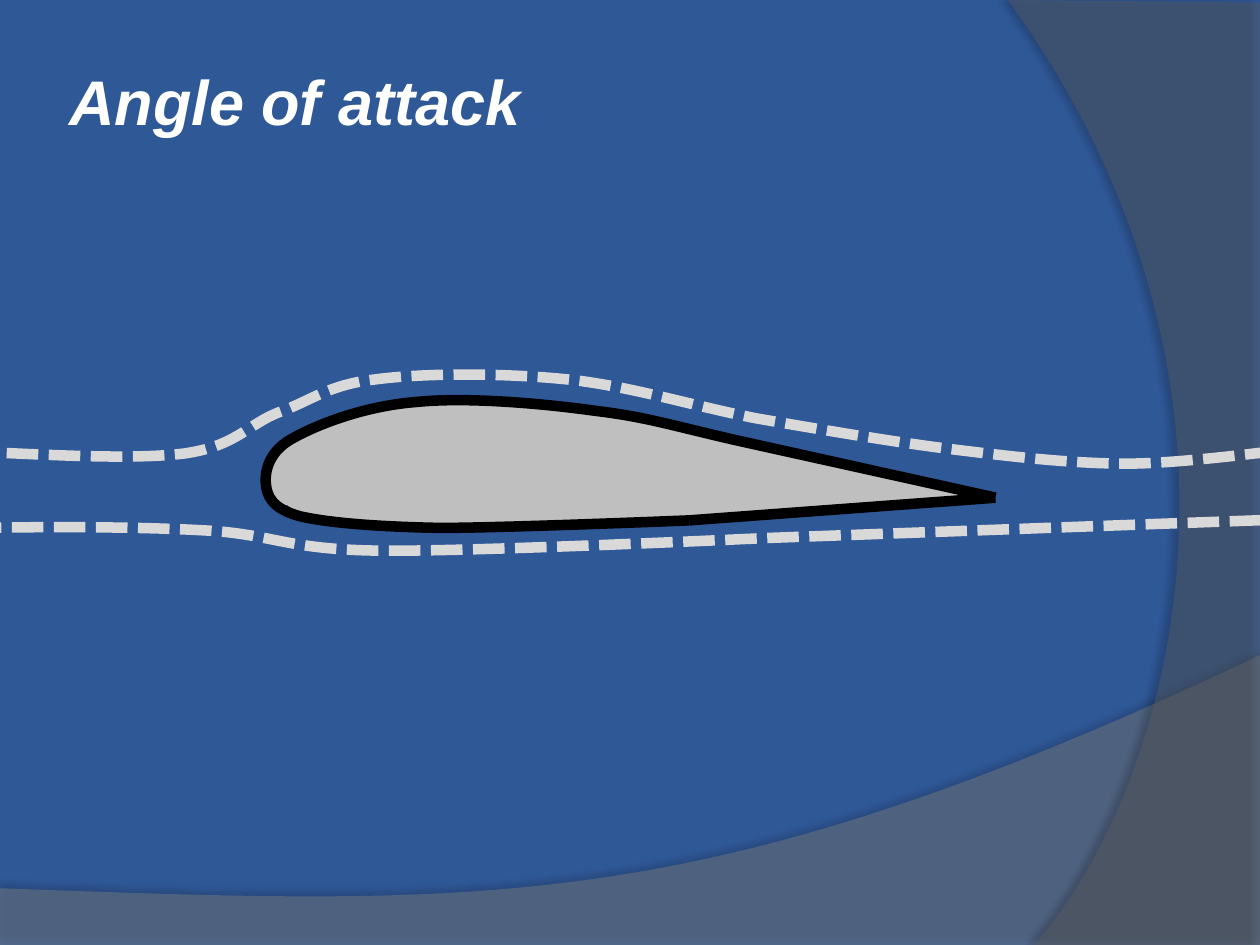
"""Build the angle of attack slide: an airfoil between two dashed streamlines."""
import pptx
import pptx.dml.color
import pptx.enum.dml
import pptx.enum.shapes
import pptx.enum.text
import pptx.oxml
import pptx.oxml.ns
import pptx.util
from pptx.util import Cm

INCH = 2.54
BLACK, WHITE, GREY, STREAM = "000000", "FFFFFF", "BFBFBF", "D9D9D9"

GROUND_BAND = [(0, 7.05), (0, 7.51), (10, 7.51), (10, 5.2),
               (5.59, 7.29, 3.91, 7.19, 0, 7.05)]
SIDE_BAND = [(10, 0.02), (10, 7.5), (8.21, 7.5),
             (9.35, 6.19, 10.18, 3, 8, 0), (10, 0.02)]
WING_BODY = [(7.64, 3.94), (7.75, 3.81, 6.06, 3.53, 5.52, 3.42),
             (4.97, 3.3, 4.73, 3.26, 4.37, 3.23), (4, 3.19, 3.62, 3.18, 3.32, 3.21),
             (3.02, 3.23, 2.74, 3.3, 2.55, 3.38), (2.36, 3.45, 2.23, 3.56, 2.17, 3.65),
             (2.11, 3.73, 2.13, 3.82, 2.18, 3.9), (2.23, 3.97, 2.3, 4.05, 2.46, 4.1),
             (2.62, 4.14, 3.12, 4.17, 3.12, 4.17), (4.81, 4.15),
             (5.56, 4.11, 7.52, 4.06, 7.64, 3.94)]
WING_OUTLINE = [(7.9, 3.95), (5.87, 3.5), (5.34, 3.38, 5.14, 3.31, 4.72, 3.26),
                (4.29, 3.2, 3.7, 3.15, 3.31, 3.19), (2.91, 3.22, 2.54, 3.36, 2.34, 3.47),
                (2.14, 3.57, 2.1, 3.73, 2.11, 3.84), (2.12, 3.94, 2.16, 4.04, 2.39, 4.1),
                (2.62, 4.15, 2.98, 4.18, 3.49, 4.19), (4, 4.19, 5.47, 4.13, 5.47, 4.13)]
UPPER_STREAM = [(-0.28, 3.58), (0.38, 3.61, 1.04, 3.65, 1.46, 3.6),
                (1.88, 3.54, 1.96, 3.37, 2.22, 3.27), (2.47, 3.18, 2.61, 3.05, 2.99, 3.01),
                (3.37, 2.96, 3.99, 2.96, 4.49, 3.01), (4.99, 3.06, 5.49, 3.22, 6, 3.32),
                (6.52, 3.41, 7.1, 3.51, 7.59, 3.57), (8.08, 3.63, 8.52, 3.68, 8.95, 3.68),
                (9.38, 3.68, 10.19, 3.57, 10.19, 3.57)]
LOWER_STREAM = [(-0.24, 4.19), (0.42, 4.18, 1.09, 4.18, 1.63, 4.21),
                (2.17, 4.24, 2.26, 4.36, 3, 4.37), (3.75, 4.38, 6.09, 4.27, 6.09, 4.27),
                (10.24, 4.12)]
STREAMS = [(UPPER_STREAM, (-0.28, 2.97, 10.47, 0.71)),
           (LOWER_STREAM, (-0.24, 4.12, 10.48, 0.25))]


def inch(v):
    return Cm(v * INCH)


def rgb(color):
    return pptx.dml.color.RGBColor.from_string(color)


def xml(tag, attrs="", inner=""):
    return pptx.oxml.parse_xml(f'<a:{tag} {pptx.oxml.ns.nsdecls("a")} {attrs}>{inner}</a:{tag}>')


def find(sp, tag):
    return sp.element.spPr.find(".//" + pptx.oxml.ns.qn(tag))


def paint(sp, fill=None, opacity=100, line=None, dash=None):
    sp.shadow.inherit = False
    if fill:
        sp.fill.solid()
        sp.fill.fore_color.rgb = rgb(fill)
        if opacity < 100:
            find(sp, "a:srgbClr").append(xml("alpha", f'val="{opacity * 1000}"'))
    else:
        sp.fill.background()
    if line:
        sp.line.color.rgb = rgb(line)
        sp.line.width = pptx.util.Pt(6)
        sp.line.dash_style = dash
    else:
        sp.line.fill.background()
    return sp


def add_outline(s, outline, box, closed=False, **style):
    ends = [(inch(seg[-2]), inch(seg[-1])) for seg in outline]
    fb = s.shapes.build_freeform(*ends[0])
    fb.add_line_segments(ends[1:], close=closed)
    sp = fb.convert_to_shape()
    sp.left, sp.top, sp.width, sp.height = map(inch, box)
    geom = find(sp, "a:path")
    geom.set("w", str(sp.width))
    geom.set("h", str(sp.height))
    for node, seg in zip(list(geom), outline):
        pts = "".join(f'<a:pt x="{inch(x - box[0])}" y="{inch(y - box[1])}"/>'
                      for x, y in zip(seg[::2], seg[1::2]))
        tag = "cubicBezTo" if len(seg) == 6 else "moveTo" if seg is outline[0] else "lnTo"
        geom.replace(node, xml(tag, inner=pts))
    return paint(sp, **style)


def add_shadow(sp, opacity, blur, dist, angle):
    color = f'<a:srgbClr val="{BLACK}"><a:alpha val="{opacity * 1000}"/></a:srgbClr>'
    find(sp, "a:effectLst").append(xml(
        "outerShdw", f'blurRad="{pptx.util.Pt(blur)}" dist="{pptx.util.Pt(dist)}" '
        f'dir="{angle * 60000}" algn="ctr" rotWithShape="0"', color))


def add_text(s, text, left, top, width, height, size, color, font="Arial", bold=False, italic=False):
    tf = s.shapes.add_textbox(inch(left), inch(top), inch(width), inch(height)).text_frame
    tf.word_wrap = True
    tf.vertical_anchor = pptx.enum.text.MSO_ANCHOR.MIDDLE
    tf.margin_left = tf.margin_right = tf.margin_top = tf.margin_bottom = inch(0.05)
    r = tf.paragraphs[0].add_run()
    r.text = text
    r.font.name, r.font.size = font, pptx.util.Pt(size)
    r.font.bold, r.font.italic = bold, italic
    r.font.color.rgb = rgb(color)


def main():
    prs = pptx.Presentation()
    prs.slide_width, prs.slide_height = inch(10), inch(7.5)
    s = prs.slides.add_slide(prs.slide_layouts[6])
    s.background.fill.solid()
    s.background.fill.fore_color.rgb = rgb("2F5897")

    ground = add_outline(s, GROUND_BAND, (0, 5.2, 10, 2.31), closed=True,
                         fill="7F7F7F", opacity=45)
    add_shadow(ground, 35, 4, 3.5, 270)
    side = add_outline(s, SIDE_BAND, (8, 0, 2, 7.5), closed=True, fill="5E5E5E", opacity=40)
    add_shadow(side, 45, 4, 4, 180)

    nose = s.shapes.add_shape(pptx.enum.shapes.MSO_SHAPE.OVAL,
                              inch(2.11), inch(3.77), inch(0.28), inch(0.24))
    paint(nose, fill=GREY)
    add_outline(s, WING_BODY, (2.13, 3.19, 5.51, 0.97), closed=True, fill=GREY)
    add_outline(s, WING_OUTLINE, (2.11, 3.17, 5.79, 1.01), line=BLACK)
    edge = s.shapes.add_connector(pptx.enum.shapes.MSO_CONNECTOR.STRAIGHT,
                                  inch(5.47), inch(4.13), inch(7.9), inch(3.95))
    edge.line.color.rgb = rgb(BLACK)
    edge.line.width = pptx.util.Pt(6)
    edge.element.spPr.append(xml("effectLst"))

    add_text(s, "Angle of attack", 0.5, 0.17, 8.17, 1.25,
             size=36, color=WHITE, bold=True, italic=True)
    for stream, box in STREAMS:
        add_outline(s, stream, box, line=STREAM, dash=pptx.enum.dml.MSO_LINE.SQUARE_DOT)
    prs.save("out.pptx")


if __name__ == "__main__":
    main()
